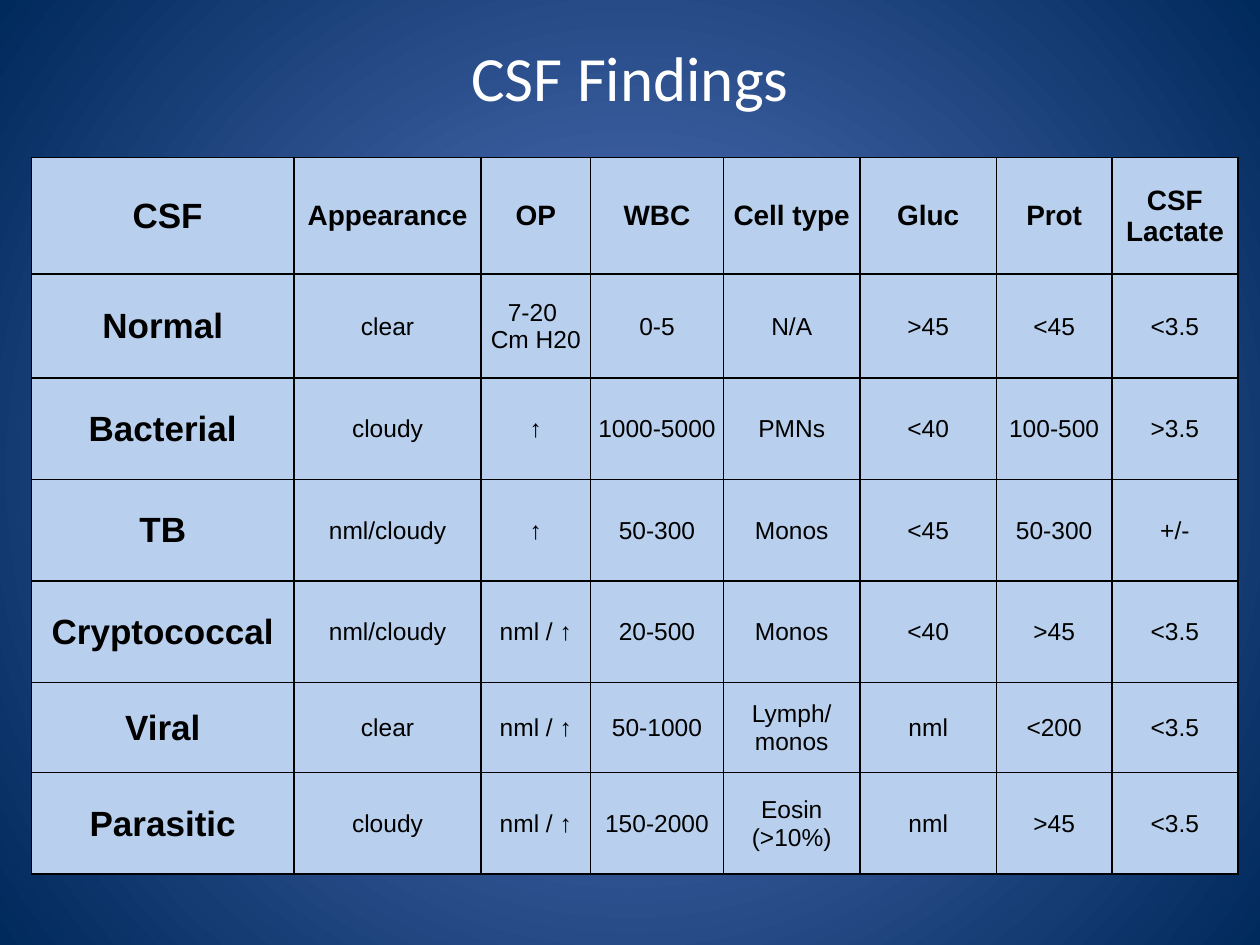
from lxml import etree
from pptx import Presentation
from pptx.dml.color import RGBColor
from pptx.enum import text
from pptx.oxml import ns
from pptx.util import Pt

COLUMN_WIDTHS = [150, 107, 62.5, 76, 78, 78, 66, 72]
ROW_HEIGHTS = [66.5, 59.5, 58, 58, 58, 51.5, 58]
ROWS = [
    [" CSF", "Appearance", "OP", "WBC", "Cell type", "Gluc", "Prot", "CSF Lactate"],
    ["Normal", "clear", "7-20 \nCm H20", "0-5", "N/A", ">45", "<45", "<3.5"],
    ["Bacterial", "cloudy", "↑", "1000-5000", "PMNs", "<40", "100-500", ">3.5"],
    ["TB", "nml/cloudy", "↑", "50-300", "Monos", "<45", "50-300", "+/-"],
    ["Cryptococcal", "nml/cloudy", "nml / ↑", "20-500", "Monos", "<40", ">45", "<3.5"],
    ["Viral", "clear", "nml / ↑", "50-1000", "Lymph/ monos", "nml", "<200", "<3.5"],
    ["Parasitic", "cloudy", "nml / ↑", "150-2000", "Eosin (>10%)", "nml", ">45", "<3.5"],
]


def rgb(value):
    return RGBColor.from_string(value)


def format_text(tf, font, size, color, bold=False):
    tf.word_wrap = True
    tf.vertical_anchor = text.MSO_ANCHOR.MIDDLE
    for p in tf.paragraphs:
        p.alignment = text.PP_ALIGN.CENTER
        for r in p.runs:
            r.font.name = font
            r.font.size = Pt(size)
            r.font.bold = bold
            r.font.color.rgb = rgb(color)


def set_background(s, center, edge):
    """Fill the slide with a radial gradient."""
    fill = s.background.fill
    fill.gradient()
    for stop, color, position in zip(fill.gradient_stops, (center, edge), (0, 1)):
        stop.color.rgb = rgb(color)
        stop.position = position
    grad = s.background._cSld.find(".//" + ns.qn("a:gradFill"))
    grad.remove(grad.find(ns.qn("a:lin")))
    radial = etree.SubElement(grad, ns.qn("a:path"), {"path": "circle"})
    etree.SubElement(radial, ns.qn("a:fillToRect"), dict.fromkeys("ltrb", "50000"))


def add_title(s, left, top, width, height):
    sp = s.shapes.title
    sp.left, sp.top, sp.width, sp.height = map(Pt, (left, top, width, height))
    sp.text_frame.text = "CSF Findings"
    format_text(sp.text_frame, "Calibri", 36, "FFFFFF")


def add_borders(cell, color, width):
    tc_pr = cell._tc.get_or_add_tcPr()
    for side in ("lnL", "lnR", "lnT", "lnB"):
        line = etree.SubElement(tc_pr, ns.qn("a:" + side), {"w": str(Pt(width))})
        fill = etree.SubElement(line, ns.qn("a:solidFill"))
        etree.SubElement(fill, ns.qn("a:srgbClr"), {"val": color})


def fill_cell(cell, words, size, bold):
    cell.margin_left = cell.margin_right = cell.margin_top = Pt(0.72)
    cell.margin_bottom = 0
    cell.vertical_anchor = text.MSO_ANCHOR.MIDDLE
    add_borders(cell, "000000", 1)
    cell.fill.solid()
    cell.fill.fore_color.rgb = rgb("B8D0ED")
    cell.text_frame.text = words
    format_text(cell.text_frame, "Arial", size, "000000", bold)


def add_findings_table(s, left, top):
    frame = s.shapes.add_table(
        len(ROWS), len(COLUMN_WIDTHS), Pt(left), Pt(top),
        Pt(sum(COLUMN_WIDTHS)), Pt(sum(ROW_HEIGHTS)))
    table = frame.table
    for column, width in zip(table.columns, COLUMN_WIDTHS):
        column.width = Pt(width)
    for row, height in zip(table.rows, ROW_HEIGHTS):
        row.height = Pt(height)
    for i, row in enumerate(ROWS):
        for j, words in enumerate(row):
            size = 20 if j == 0 else 16 if i == 0 else 14
            fill_cell(table.cell(i, j), words, size, bold=i == 0 or j == 0)


def main():
    prs = Presentation()
    prs.slide_width, prs.slide_height = Pt(720), Pt(540)
    s = prs.slides.add_slide(prs.slide_layouts[5])
    set_background(s, "5E7CC5", "00295C")
    add_title(s, 0, 18, 720, 51)
    add_findings_table(s, 18, 90)
    prs.save("out.pptx")


if __name__ == "__main__":
    main()
